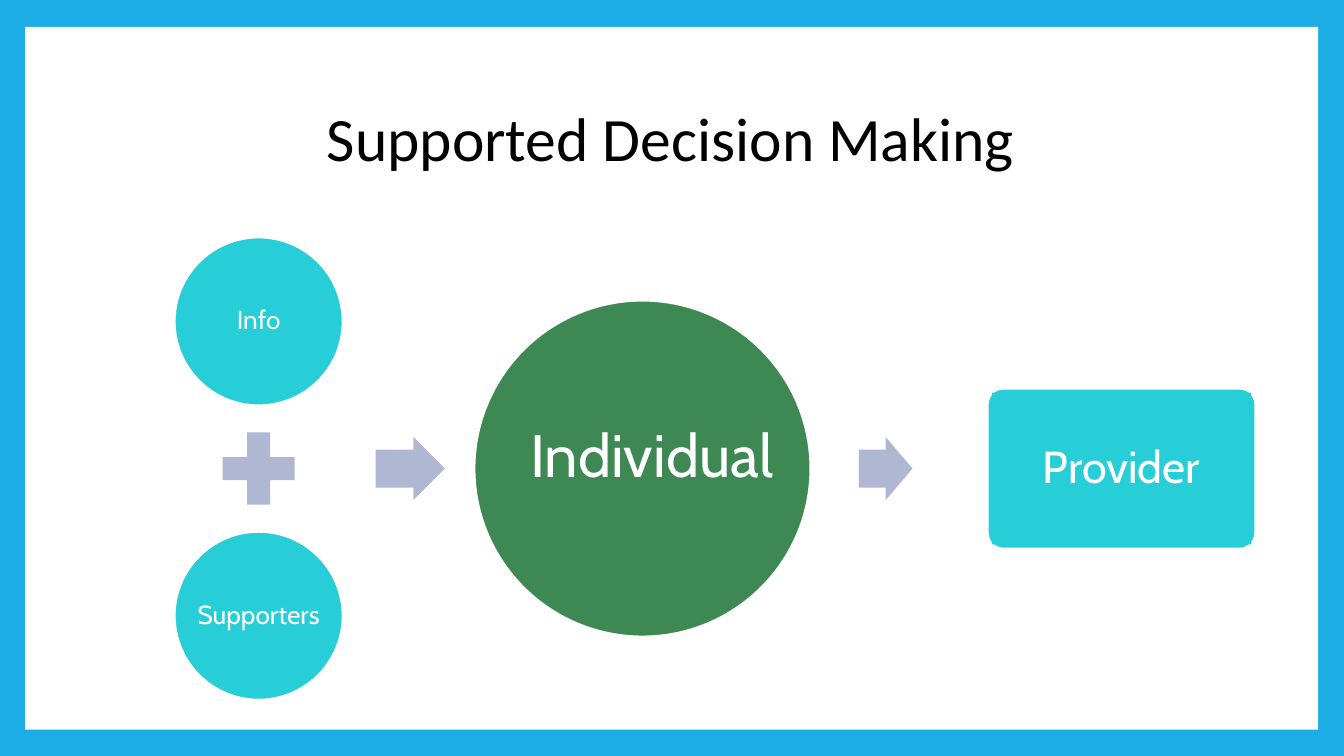
"""Build a slide on how support leads to a decision."""
from dataclasses import dataclass

from pptx import Presentation
from pptx.dml.color import RGBColor as Rgb
from pptx.enum.shapes import MSO_SHAPE as Kind
from pptx.enum.text import MSO_ANCHOR as Anchor, PP_ALIGN as Align
from pptx.slide import Slide
from pptx.util import Inches, Pt

WIDE = 10
HIGH = WIDE * 9 / 16
COLS = 100
CELL = WIDE / COLS
MID = 34.87
STEP = 10.95
LEFT = 19.25
HUES = {
    "frame": "1CADE4",
    "white": "FFFFFF",
    "black": "000000",
    "aqua": "27CED7",
    "green": "3E8853",
    "mauve": "AFB7D2",
}


@dataclass
class Box:
    """A place on the grid, given by its centre."""
    x: float
    y: float
    w: float
    h: float

    def spot(self) -> list[int]:
        """Return left, top, width and height."""
        cells = (self.x - self.w / 2, self.y - self.h / 2, self.w, self.h)
        return [Inches(n * CELL) for n in cells]


@dataclass
class Part:
    """A filled shape."""
    kind: Kind
    box: Box
    fill: str
    rim: bool = False
    tweaks: tuple[float, ...] = ()


@dataclass
class Label:
    """A centred line of text."""
    text: str
    box: Box
    size: float
    pad: float
    font: str = "Cabin"
    hue: str = "white"
    fill: str = ""


PARTS = [
    Part(Kind.RECTANGLE, Box(49.97, 28.15, 96.2, 52.3), "white"),
    Part(Kind.OVAL, Box(LEFT, MID - STEP, 12.6, 12.6), "aqua", True),
    Part(Kind.MATH_PLUS, Box(LEFT, MID, 7.3, 7.3), "mauve", False, (0.235,)),
    Part(Kind.OVAL, Box(LEFT, MID + STEP, 12.6, 12.6), "aqua", True),
    Part(Kind.RIGHT_ARROW, Box(30.53, MID, 5.14, 4.7), "mauve", False, (0.6, 0.5)),
    Part(Kind.OVAL, Box(47.8, MID, 25.1, 25.1), "green", True),
    Part(Kind.RIGHT_ARROW, Box(65.9, MID, 4, 4.7), "mauve", False, (0.6, 0.5)),
    Part(Kind.ROUNDED_RECTANGLE, Box(83.45, MID, 20, 12), "aqua", True, (0.1,)),
]
LABELS = [
    Label("Supported Decision Making", Box(49.9, 10.55, 81, 11.1), 33, 0.1,
          "Calibri", "black"),
    Label("Info", Box(LEFT, MID - STEP, 8.9, 8.9), 14, 0.02),
    Label("Supporters", Box(LEFT, MID + STEP, 10.7, 8.9), 14, 0.02),
    Label("Individual", Box(48.5, 34.1, 20, 17.8), 32, 0.04),
    Label("Provider", Box(83.45, MID, 19.3, 11.3), 24, 0.18, fill="aqua"),
]


def tint(name: str) -> Rgb:
    """Look up a colour."""
    return Rgb.from_string(HUES[name])


def style(item: object, form: dict) -> None:
    """Set each format value on an item."""
    for key, val in form.items():
        setattr(item, key, val)


def paint(fill: object, name: str) -> None:
    """Give a fill one plain colour."""
    fill.solid()
    fill.fore_color.rgb = tint(name)


def draw(slide: Slide, part: Part) -> None:
    """Draw a filled shape."""
    shape = slide.shapes.add_shape(part.kind, *part.box.spot())
    shape.shadow.inherit = False
    paint(shape.fill, part.fill)
    if part.rim:
        paint(shape.line.fill, "white")
        shape.line.width = Pt(1.75)
    else:
        shape.line.fill.background()
    for i, val in enumerate(part.tweaks):
        shape.adjustments[i] = val


def write(slide: Slide, label: Label) -> None:
    """Write a centred line of text."""
    shape = slide.shapes.add_textbox(*label.box.spot())
    if label.fill:
        paint(shape.fill, label.fill)
    frame = shape.text_frame
    sides = ("left", "top", "right", "bottom")
    pads = {f"margin_{side}": Inches(label.pad) for side in sides}
    style(frame, {"word_wrap": True, "vertical_anchor": Anchor.MIDDLE, **pads})
    para = frame.paragraphs[0]
    style(para, {"alignment": Align.CENTER, "line_spacing": 0.9})
    run = para.add_run()
    run.text = label.text
    style(run.font, {"name": label.font, "size": Pt(label.size)})
    run.font.color.rgb = tint(label.hue)


def main() -> None:
    """Build and save the slide."""
    deck = Presentation()
    style(deck, {"slide_width": Inches(WIDE), "slide_height": Inches(HIGH)})
    slide = deck.slides.add_slide(deck.slide_layouts[6])
    paint(slide.background.fill, "frame")
    for part in PARTS:
        draw(slide, part)
    for label in LABELS:
        write(slide, label)
    deck.save("out.pptx")


if __name__ == "__main__":
    main()
